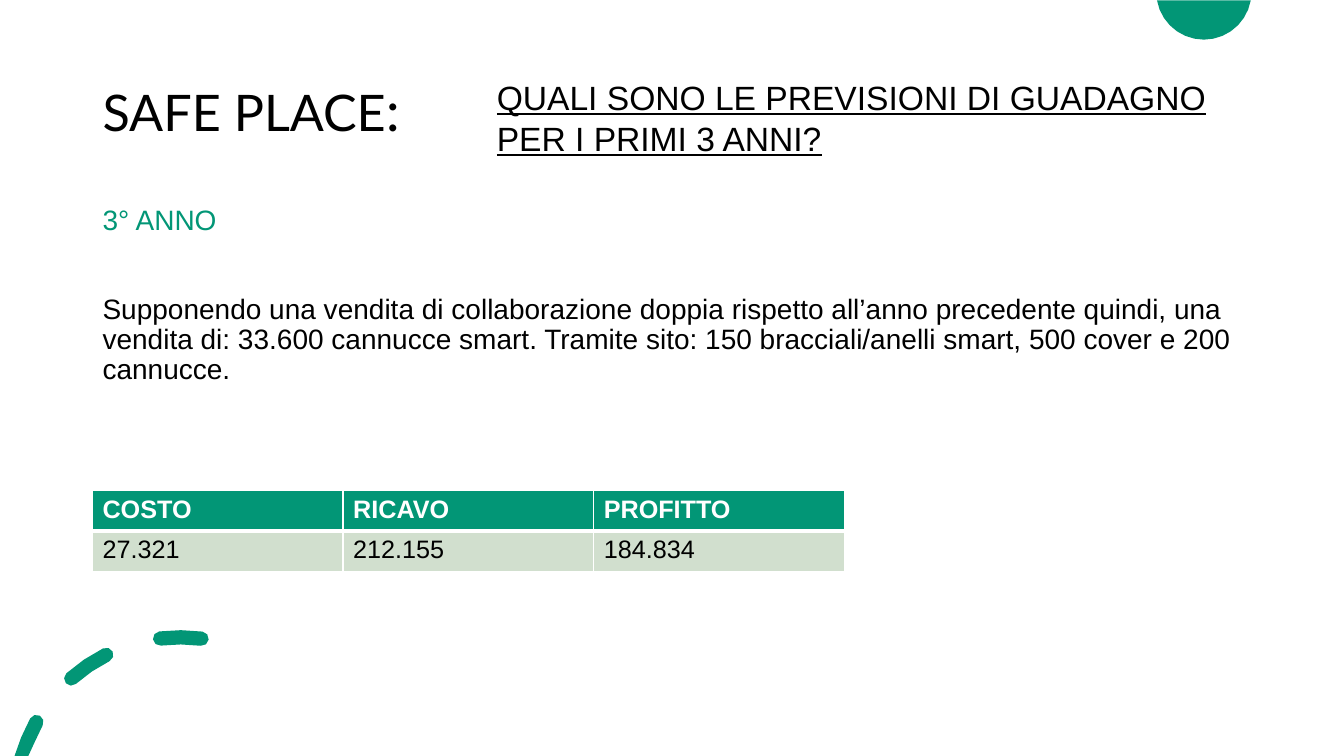
from dataclasses import dataclass
from math import cos, radians, sin

from lxml.etree import SubElement
from pptx import Presentation
from pptx.dml.color import RGBColor
from pptx.enum.text import MSO_ANCHOR, MSO_AUTO_SIZE, PP_ALIGN
from pptx.oxml.ns import qn
from pptx.oxml.xmlchemy import OxmlElement
from pptx.util import Cm, Pt

COLORS = {"green": "029676", "sage": "D1DFCE", "black": "000000", "white": "FFFFFF"}
WIDTH, HEIGHT = 33.87, 19.05
Point = tuple[float, float]


@dataclass
class Box:
    left: float
    top: float
    width: float
    height: float

    def lengths(self) -> list[Cm]:
        return [Cm(v) for v in (self.left, self.top, self.width, self.height)]


@dataclass
class Dash:
    start: float
    end: float
    start_cap: bool = True


@dataclass
class Para:
    text: str
    color: str
    space_before: float


TITLE_BOX = Box(2.33, 1.02, 8.76, 3.68)
BODY_BOX = Box(2.33, 5.08, 29.21, 10.72)
QUESTION_BOX = Box(12.27, 1.82, 20.02, 2.31)
TABLE_BOX = Box(2.33, 12.35, 18.95, 2.06)

DASHES = [Dash(15, 29, False), Dash(48.5, 63.3), Dash(83, 97.5)]
DASH_CENTER, DASH_RADIUS, DASH_HALF = (4.54, 20.2), 4.14, 0.18

PARAS = [
    Para("3° ANNO", "green", 10),
    Para("Supponendo una vendita di collaborazione doppia rispetto all’anno precedente quindi, "
         "una vendita di: 33.600 cannucce smart. Tramite sito: 150 bracciali/anelli smart, "
         "500 cover e 200 cannucce.", "black", 41.5),
]
ROWS = [["COSTO", "RICAVO", "PROFITTO"], ["27.321", "212.155", "184.834"]]


def rgb(name: str) -> RGBColor:
    return RGBColor.from_string(COLORS[name])


def apply(target, fmt: dict) -> None:
    for name, value in fmt.items():
        setattr(target, name, value)


def add_run(p, text: str, color: str, **fmt) -> None:
    r = p.add_run()
    r.text = text
    apply(r.font, fmt)
    r.font.color.rgb = rgb(color)


def place(sp, box: Box) -> None:
    apply(sp, dict(zip(("left", "top", "width", "height"), box.lengths())))


def arc(center: Point, radius: float, start: float, end: float, steps: int) -> list[Point]:
    angles = [radians(start + (end - start) * i / steps) for i in range(steps + 1)]
    return [(center[0] - radius * cos(a), center[1] - radius * sin(a)) for a in angles]


def dash_outline(dash: Dash) -> list[Point]:
    first, last = arc(DASH_CENTER, DASH_RADIUS, dash.start, dash.end, 1)
    outer = arc(DASH_CENTER, DASH_RADIUS + DASH_HALF, dash.start, dash.end, 2)
    inner = arc(DASH_CENTER, DASH_RADIUS - DASH_HALF, dash.end, dash.start, 2)
    end_cap = arc(last, DASH_HALF, dash.end, dash.end + 180, 4)[1:-1]
    start_cap = arc(first, DASH_HALF, dash.start + 180, dash.start + 360, 4)[1:-1]
    return outer + end_cap + inner + (start_cap if dash.start_cap else [])


def add_outlines(s, outlines: list[list[Point]]) -> None:
    contours = [[(Cm(x), Cm(min(max(y, 0), HEIGHT))) for x, y in pts] for pts in outlines]
    fb = s.shapes.build_freeform(*contours[0][0])
    for i, pts in enumerate(contours):
        if i:
            fb.move_to(*pts[0])
        fb.add_line_segments(pts[1:])
    sp = fb.convert_to_shape()
    sp.shadow.inherit = False
    sp.fill.solid()
    sp.fill.fore_color.rgb = rgb("green")
    sp.line.fill.background()


def add_title(s) -> None:
    sp = s.shapes.title
    place(sp, TITLE_BOX)
    tf = sp.text_frame
    apply(tf, {"word_wrap": True, "auto_size": MSO_AUTO_SIZE.NONE,
               "vertical_anchor": MSO_ANCHOR.MIDDLE})
    p = tf.paragraphs[0]
    apply(p, {"alignment": PP_ALIGN.LEFT, "line_spacing": 0.9})
    for text, size in (("SAFE PLACE", 36), (":", 40)):
        add_run(p, text, "black", name="Lato", size=Pt(size))


def add_body(s) -> None:
    sp = s.placeholders[1]
    place(sp, BODY_BOX)
    tf = sp.text_frame
    apply(tf, {"word_wrap": True, "auto_size": MSO_AUTO_SIZE.NONE})
    for i, para in enumerate(PARAS):
        p = tf.add_paragraph() if i else tf.paragraphs[0]
        apply(p, {"line_spacing": 0.9, "space_before": Pt(para.space_before)})
        pPr = p._p.get_or_add_pPr()
        pPr.set("marL", "0")
        pPr.set("indent", "0")
        pPr.append(OxmlElement("a:buNone"))
        add_run(p, para.text, para.color, name="Arial", size=Pt(20))


def add_question(s) -> None:
    tf = s.shapes.add_textbox(*QUESTION_BOX.lengths()).text_frame
    apply(tf, {"word_wrap": True, "auto_size": MSO_AUTO_SIZE.SHAPE_TO_FIT_TEXT})
    add_run(tf.paragraphs[0], "QUALI SONO LE PREVISIONI DI GUADAGNO PER I PRIMI 3 ANNI?",
            "black", name="Arial", size=Pt(24), underline=True)


def set_borders(cell, widths: dict[str, int]) -> None:
    tcPr = cell._tc.get_or_add_tcPr()
    for i, (side, width) in enumerate(widths.items()):
        ln = OxmlElement(f"a:ln{side}")
        ln.set("w", str(Pt(width)))
        fill = SubElement(ln, qn("a:solidFill"))
        SubElement(fill, qn("a:srgbClr")).set("val", COLORS["white"])
        tcPr.insert(i, ln)


def add_forecast(s) -> None:
    table = s.shapes.add_table(len(ROWS), len(ROWS[0]), *TABLE_BOX.lengths()).table
    for i, row in enumerate(ROWS):
        header = i == 0
        for j, text in enumerate(row):
            cell = table.cell(i, j)
            cell.fill.solid()
            cell.fill.fore_color.rgb = rgb("green" if header else "sage")
            set_borders(cell, {"L": 1, "R": 1, "T": 1 if header else 3, "B": 3 if header else 1})
            add_run(cell.text_frame.paragraphs[0], text, "white" if header else "black",
                    name="Arial", size=Pt(18), bold=header)


def main() -> None:
    prs = Presentation()
    apply(prs, {"slide_width": Cm(WIDTH), "slide_height": Cm(HEIGHT)})
    s = prs.slides.add_slide(prs.slide_layouts[1])
    add_outlines(s, [arc((30.34, -0.2), 1.2, 190, 350, 14)])
    add_outlines(s, [dash_outline(dash) for dash in DASHES])
    add_title(s)
    add_body(s)
    add_question(s)
    add_forecast(s)
    prs.save("out.pptx")


if __name__ == "__main__":
    main()
